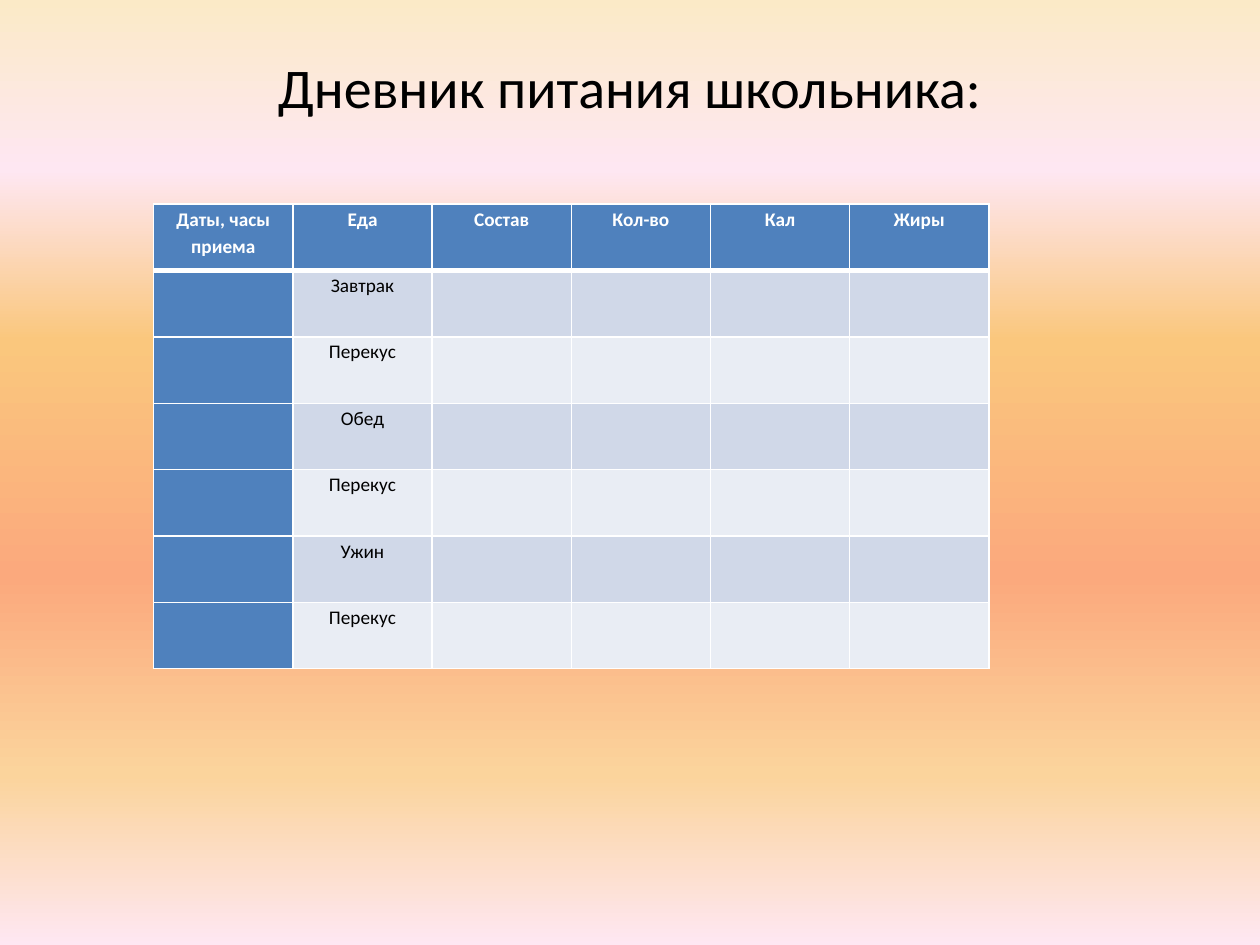
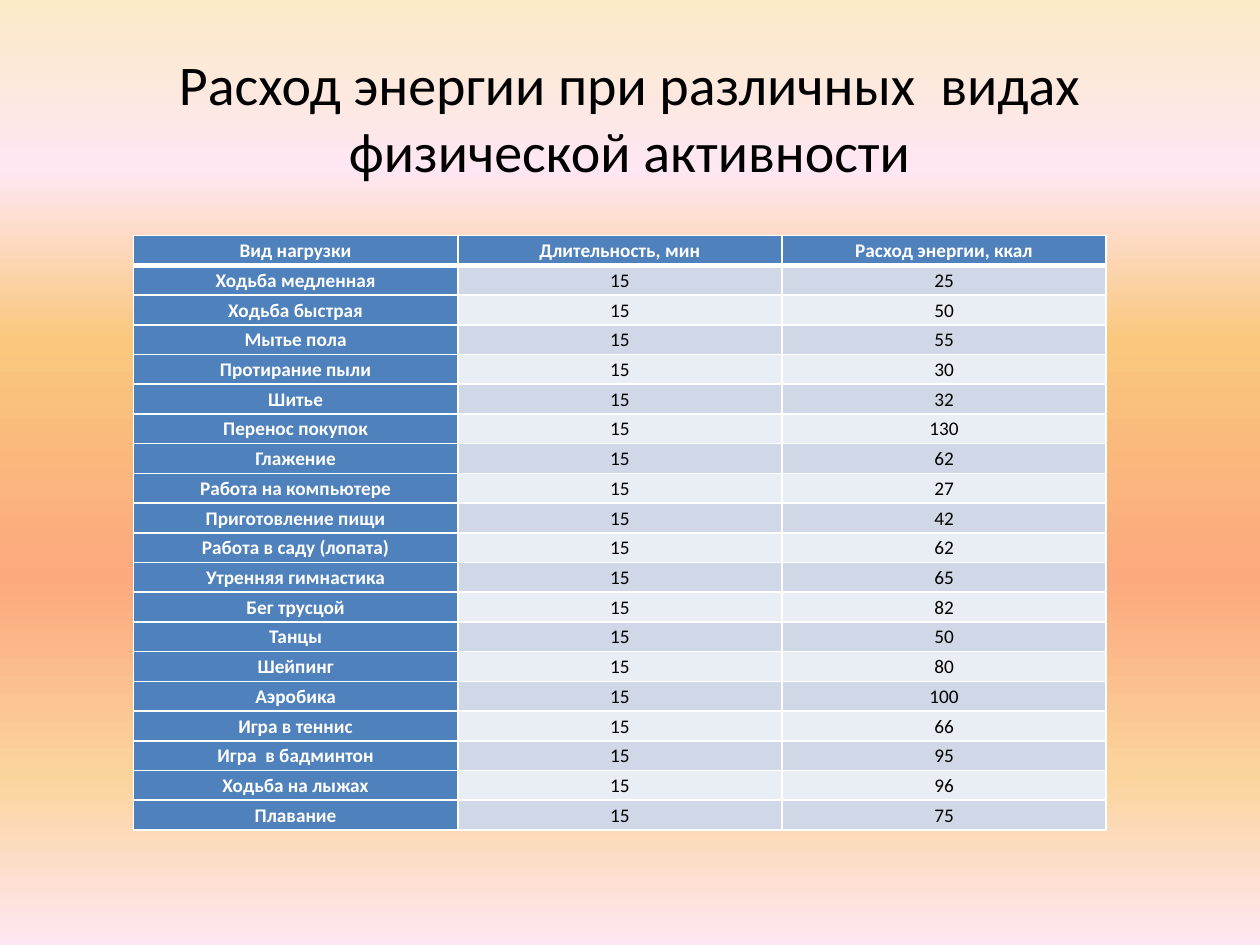
from lxml import etree
from pptx import Presentation
from pptx.dml.color import RGBColor
from pptx.enum import text
from pptx.oxml import ns
from pptx.util import Inches, Pt

BLACK = RGBColor(0x00, 0x00, 0x00)
WHITE = RGBColor(0xFF, 0xFF, 0xFF)
HEADER_BLUE = RGBColor(0x4F, 0x81, 0xBD)
BANDS = (RGBColor(0xD0, 0xD8, 0xE8), RGBColor(0xE9, 0xED, 0xF4))
CREAM = RGBColor(0xFB, 0xEA, 0xC7)
PINK = RGBColor(0xFE, 0xE7, 0xF2)
AMBER = RGBColor(0xFA, 0xC7, 0x7D)
CORAL = RGBColor(0xFB, 0xA9, 0x7D)
SAND = RGBColor(0xFB, 0xD4, 0x9C)
SUNSET = ((0, CREAM), (18, PINK), (36, AMBER), (61, CORAL), (82, SAND), (100, PINK))

DIARY_COLUMNS = ("Даты, часы приема", "Еда", "Состав", "Кол-во", "Кал", "Жиры")
MEALS = ("Завтрак", "Перекус", "Обед", "Перекус", "Ужин", "Перекус")

ACTIVITY_COLUMNS = ("Вид нагрузки", "Длительность, мин", "Расход энергии, ккал")
MINUTES = 15
KCAL_BY_ACTIVITY = {
    "Ходьба медленная": 25,
    "Ходьба быстрая": 50,
    "Мытье пола": 55,
    "Протирание пыли": 30,
    "Шитье": 32,
    "Перенос покупок": 130,
    "Глажение": 62,
    "Работа на компьютере": 27,
    "Приготовление пищи": 42,
    "Работа в саду (лопата)": 62,
    "Утренняя гимнастика": 65,
    "Бег трусцой": 82,
    "Танцы": 50,
    "Шейпинг": 80,
    "Аэробика": 100,
    "Игра в теннис": 66,
    "Игра  в бадминтон": 95,
    "Ходьба на лыжах": 96,
    "Плавание": 75,
}


def add_child(parent, tag, **attributes):
    return etree.SubElement(parent, ns.qn(tag), attributes)


class Deck:
    """Holds the shared style and the slide being filled."""

    font = "Calibri"
    title_size = Pt(32)
    table_size = Pt(11)

    def __init__(self):
        self.presentation = Presentation()
        self.presentation.slide_width = Inches(10)
        self.presentation.slide_height = Inches(7.5)
        self.slide = None

    def new_slide(self):
        self.slide = self.presentation.slides.add_slide(self.presentation.slide_layouts[6])
        self.paint_background()

    def paint_background(self):
        """Fill the slide with the vertical sunset gradient."""
        fill = self.slide.background.fill
        fill.gradient()
        gradient = self.slide.element.find(".//" + ns.qn("p:bgPr")).find(ns.qn("a:gradFill"))
        for part in list(gradient):
            gradient.remove(part)
        stops = add_child(gradient, "a:gsLst")
        for percent, color in SUNSET:
            stop = add_child(stops, "a:gs", pos=str(percent * 1000))
            add_child(stop, "a:srgbClr", val=str(color))
        add_child(gradient, "a:lin", ang="5400000", scaled="0")

    def add_centred_run(self, paragraph, words, size, color, bold=False):
        paragraph.alignment = text.PP_ALIGN.CENTER
        run = paragraph.add_run()
        run.text = words
        run.font.name = self.font
        run.font.size = size
        run.font.bold = bold
        run.font.color.rgb = color

    def title(self, words, height):
        box = self.slide.shapes.add_textbox(Inches(0.5), Inches(0.3), Inches(9), Inches(height))
        frame = box.text_frame
        frame.word_wrap = True
        frame.vertical_anchor = text.MSO_ANCHOR.MIDDLE
        self.add_centred_run(frame.paragraphs[0], words, self.title_size, BLACK)

    def table(self, rows, left, top, width, height):
        """Banded table whose first row and first column are headers."""
        row_count, column_count = len(rows), len(rows[0])
        table = self.slide.shapes.add_table(
            row_count, column_count, Inches(left), Inches(top), Inches(width), Inches(height)
        ).table
        table.horz_banding = False
        for row_index, row in enumerate(rows):
            for column_index, words in enumerate(row):
                is_header = row_index == 0 or column_index == 0
                cell = table.cell(row_index, column_index)
                self.style_cell(cell, row_index, is_header)
                if words:
                    paragraph = cell.text_frame.paragraphs[0]
                    paragraph.line_spacing = 1.15
                    color = WHITE if is_header else BLACK
                    self.add_centred_run(paragraph, words, self.table_size, color, is_header)

    def style_cell(self, cell, row_index, is_header):
        cell.margin_left = cell.margin_right = Inches(0.07)
        cell.margin_top = cell.margin_bottom = 0
        cell.fill.solid()
        cell.fill.fore_color.rgb = HEADER_BLUE if is_header else BANDS[(row_index - 1) % 2]
        top = 3 if row_index == 1 else 1
        bottom = 3 if row_index == 0 else 1
        self.border_cell(cell, {"a:lnL": 1, "a:lnR": 1, "a:lnT": top, "a:lnB": bottom})

    def border_cell(self, cell, points_by_side):
        properties = cell._tc.get_or_add_tcPr()
        for position, (side, points) in enumerate(points_by_side.items()):
            line = etree.Element(ns.qn(side), w=str(int(Pt(points))))
            add_child(add_child(line, "a:solidFill"), "a:srgbClr", val=str(WHITE))
            properties.insert(position, line)


def main():
    deck = Deck()

    deck.new_slide()
    deck.title("Дневник питания школьника:", height=0.77)
    unfilled = ("",) * (len(DIARY_COLUMNS) - 2)
    diary = [DIARY_COLUMNS] + [("", meal, *unfilled) for meal in MEALS]
    deck.table(diary, left=1.22, top=1.62, width=6.63, height=3.69)

    deck.new_slide()
    deck.title("Расход энергии при различных  видах физической активности", height=1.25)
    activities = [ACTIVITY_COLUMNS] + [
        (activity, str(MINUTES), str(kcal)) for activity, kcal in KCAL_BY_ACTIVITY.items()
    ]
    deck.table(activities, left=1.06, top=1.87, width=7.72, height=4.72)

    deck.presentation.save("out.pptx")


if __name__ == "__main__":
    main()
